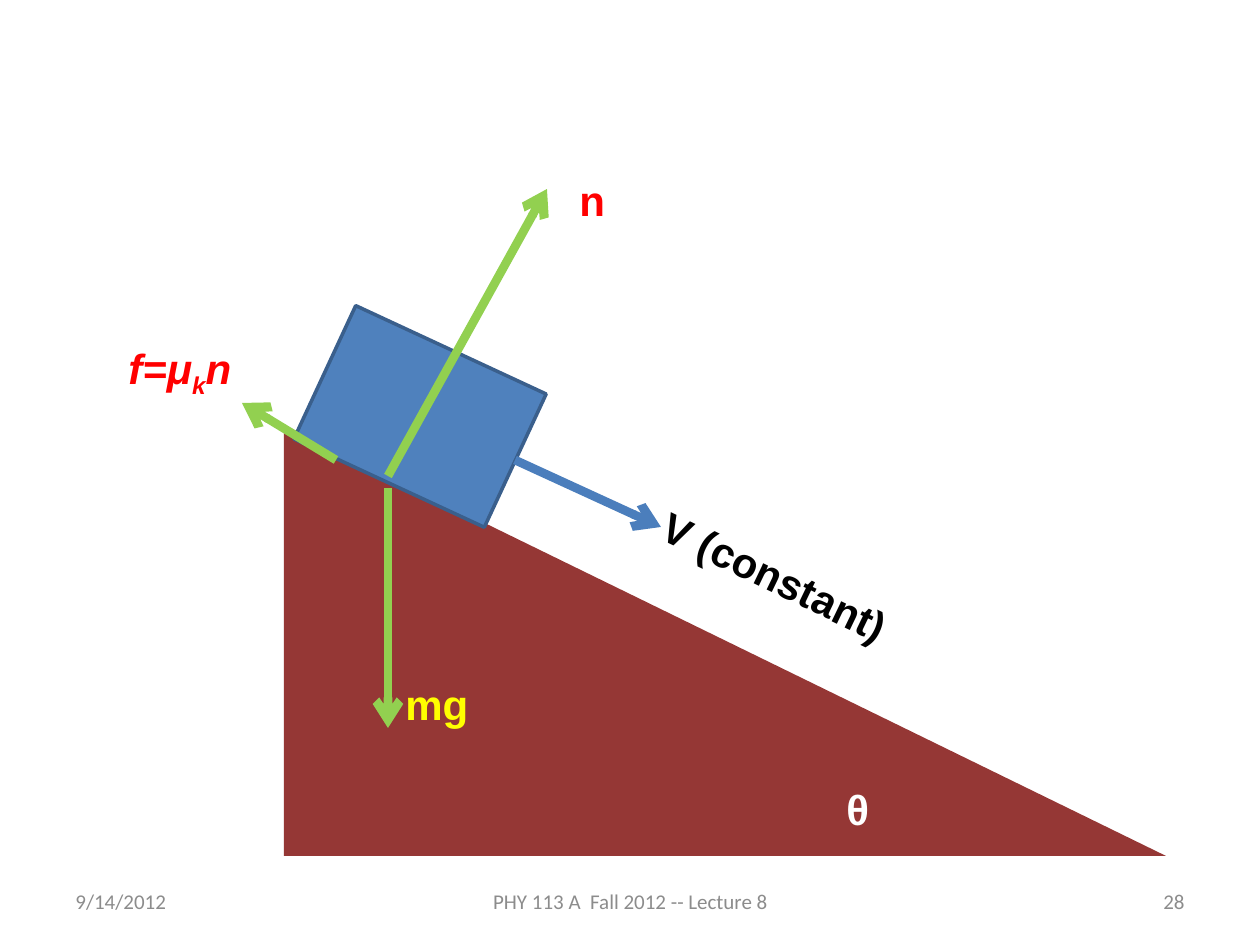
from lxml.etree import SubElement
from pptx import Presentation
from pptx.dml.color import RGBColor
from pptx.enum.shapes import MSO_CONNECTOR, MSO_SHAPE
from pptx.enum.text import MSO_ANCHOR, MSO_AUTO_SIZE, PP_ALIGN
from pptx.oxml.ns import qn
from pptx.util import Emu, Pt

PX = 914400 / 126
COLORS = {
    "ramp": "953735", "block": "4F81BD", "edge": "3A5F8C",
    "velocity": "4B7EBC", "force": "92D050", "black": "000000",
    "white": "FFFFFF", "yellow": "FFFF00", "red": "FF0000", "gray": "8C8C8C",
}

# Content: boxes are (left, top, width, height) in px
RAMP = (284, 425, 882, 431)
BLOCK, BLOCK_ANGLE = (315, 343, 210, 147), 24.9
VELOCITY_LABEL, VELOCITY_ANGLE = (635, 573, 399, 63), 25.8
ARROWS = [  # from, to, color
    ((515, 460), (661, 527), "velocity"),
    ((388, 476), (547, 189), "force"),
    ((388, 488), (388, 728), "force"),
    ((336, 460), (242, 403), "force"),
]
LABELS = [  # text runs, box, color, italic
    (["θ"], (834, 777, 101, 63), "white", False),
    (["mg"], (393, 672, 189, 63), "yellow", False),
    (["n"], (567, 168, 189, 63), "red", False),
    (["f=μ", ("k", -25), "n"], (116, 336, 189, 63), "red", True),
]
FOOTERS = [
    ("9/14/2012", 63, 294, PP_ALIGN.LEFT),
    ("PHY 113 A  Fall 2012 -- Lecture 8", 431, 399, PP_ALIGN.CENTER),
    ("28", 903, 294, PP_ALIGN.RIGHT),
]
FOOTER_TOP, FOOTER_HEIGHT = 876, 50


def emu(*values):
    return [Emu(round(v * PX)) for v in values]


def rgb(name):
    return RGBColor.from_string(COLORS[name])


def add_text(shapes, runs, box, color, size=24, font="Arial", bold=True,
             italic=False, align=PP_ALIGN.LEFT, anchor=MSO_ANCHOR.TOP,
             grow=True, angle=0):
    """Runs are strings, or (string, baseline percent) pairs."""
    sp = shapes.add_textbox(*emu(*box))
    sp.rotation = angle
    tf = sp.text_frame
    tf.word_wrap = True
    tf.auto_size = MSO_AUTO_SIZE.SHAPE_TO_FIT_TEXT if grow else MSO_AUTO_SIZE.NONE
    tf.vertical_anchor = anchor
    p = tf.paragraphs[0]
    p.alignment = align
    for run in runs:
        text, baseline = (run, 0) if isinstance(run, str) else run
        r = p.add_run()
        r.text = text
        r.font.name, r.font.size = font, Pt(size)
        r.font.bold, r.font.italic = bold, italic
        r.font.color.rgb = rgb(color)
        if baseline:
            r._r.get_or_add_rPr().set("baseline", str(baseline * 1000))


def add_solid(shapes, kind, box, fill, edge=None, angle=0):
    sp = shapes.add_shape(kind, *emu(*box))
    sp.rotation = angle
    sp.shadow.inherit = False
    sp.fill.solid()
    sp.fill.fore_color.rgb = rgb(fill)
    if edge:
        sp.line.color.rgb = rgb(edge)
        sp.line.width = Pt(2)
    else:
        sp.line.fill.background()


def add_arrow(shapes, start, end, color):
    line = shapes.add_connector(MSO_CONNECTOR.STRAIGHT, *emu(*start, *end))
    line.line.color.rgb = rgb(color)
    line.line.width = Pt(5)
    SubElement(line.line._get_or_add_ln(), qn("a:tailEnd"), type="arrow")
    SubElement(line._element.spPr, qn("a:effectLst"))


def main():
    prs = Presentation()
    prs.slide_width, prs.slide_height = emu(1260, 945)
    s = prs.slides.add_slide(prs.slide_layouts[6])

    # Ramp, sliding block and force arrows
    diagram = s.shapes.add_group_shape().shapes
    add_solid(diagram, MSO_SHAPE.RIGHT_TRIANGLE, RAMP, "ramp")
    add_solid(diagram, MSO_SHAPE.RECTANGLE, BLOCK, "block", "edge", BLOCK_ANGLE)
    add_arrow(diagram, *ARROWS[0])
    add_text(diagram, ["V (constant)"], VELOCITY_LABEL, "black",
             angle=VELOCITY_ANGLE)
    for arrow in ARROWS[1:]:
        add_arrow(diagram, *arrow)

    # Footer line
    for text, left, width, align in FOOTERS:
        add_text(s.shapes, [text], (left, FOOTER_TOP, width, FOOTER_HEIGHT),
                 "gray", size=12, font="Calibri", bold=False, align=align,
                 anchor=MSO_ANCHOR.MIDDLE, grow=False)

    # Angle and force labels
    for runs, box, color, italic in LABELS:
        add_text(s.shapes, runs, box, color, italic=italic)

    prs.save("out.pptx")


if __name__ == "__main__":
    main()
